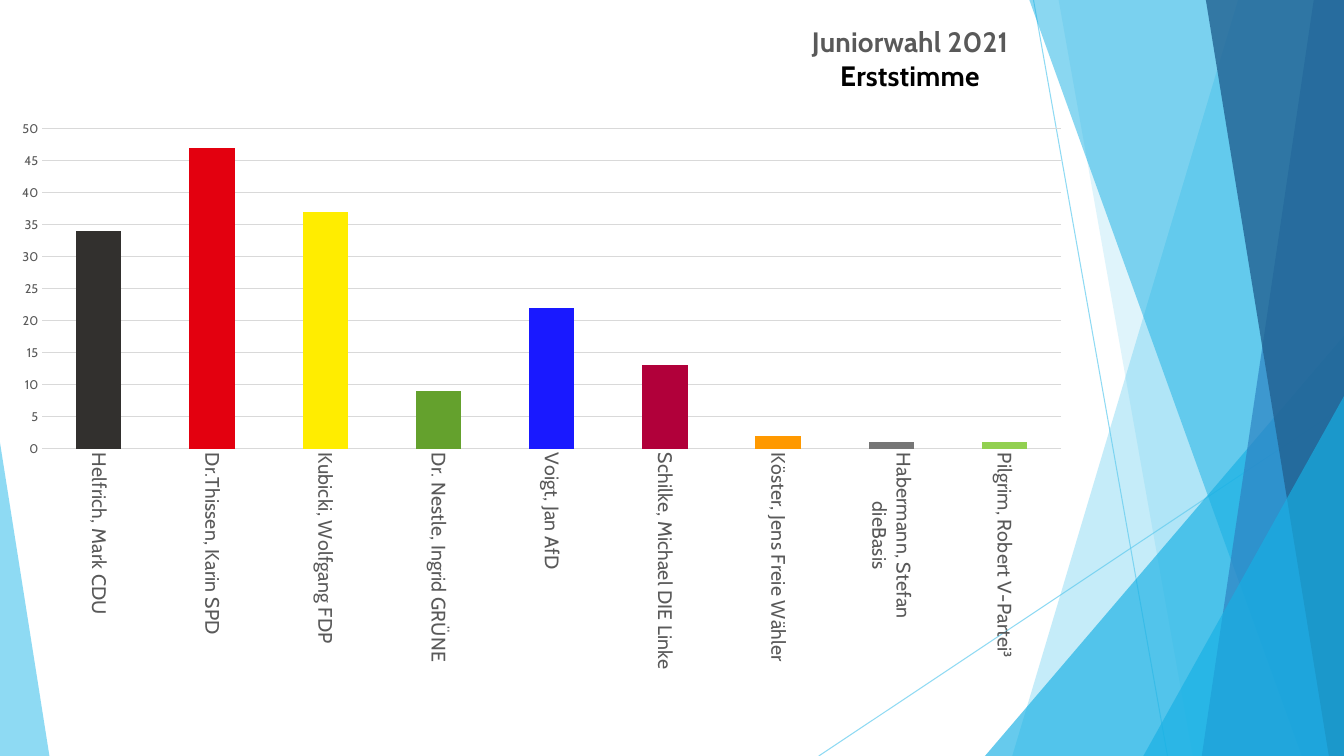
from lxml.etree import SubElement
from pptx import Presentation
from pptx.chart.data import CategoryChartData
from pptx.dml.color import RGBColor
from pptx.enum.chart import XL_CHART_TYPE, XL_TICK_MARK
from pptx.enum.shapes import MSO_CONNECTOR, MSO_SHAPE
from pptx.oxml import parse_xml
from pptx.oxml.ns import nsdecls, qn
from pptx.util import Inches, Pt

WIDE, HIGH = Inches(13.33), Inches(7.5)
FONT = "Cabin"
BLACK = RGBColor(0x00, 0x00, 0x00)
GRAY = RGBColor(0x59, 0x59, 0x59)
PALE = RGBColor(0xD9, 0xD9, 0xD9)
SKY = RGBColor(0x5F, 0xCB, 0xEF)
CYAN = RGBColor(0x17, 0xB0, 0xE4)
BLUE = RGBColor(0x2E, 0x83, 0xC3)
NAVY = RGBColor(0x22, 0x62, 0x92)

TITLE = [("Juniorwahl 2021", GRAY), ("Erststimme", BLACK)]
VOTES = [
    ("Helfrich, Mark CDU", 34, RGBColor(0x32, 0x30, 0x2E)),
    ("Dr.Thissen, Karin SPD", 47, RGBColor(0xE3, 0x00, 0x0F)),
    ("Kubicki, Wolfgang FDP", 37, RGBColor(0xFF, 0xED, 0x00)),
    ("Dr. Nestle, Ingrid GRÜNE", 9, RGBColor(0x64, 0xA1, 0x2D)),
    ("Voigt, Jan AfD", 22, RGBColor(0x19, 0x19, 0xFF)),
    ("Schilke, Michael DIE Linke", 13, RGBColor(0xB1, 0x00, 0x3A)),
    ("Köster, Jens Freie Wähler", 2, RGBColor(0xFF, 0x99, 0x00)),
    ("Habermann, Stefan\ndieBasis", 1, RGBColor(0x76, 0x76, 0x76)),
    ("Pilgrim, Robert V-Partei³", 1, RGBColor(0x92, 0xD0, 0x50)),
]

# Places are percent of the slide's width and height.
LINES = [(76.9, 0, 86.87, 100), (100, 53.73, 60.92, 100)]
# Bands reach the right edge: left x at top, left x at bottom, colour, opacity.
# Wedges rise to a slide side: left, top, width, peak side, colour, opacity.
DECOR = [
    ("band", 92.12, 75.32, SKY, 36),
    ("band", 78.77, 88.75, SKY, 20),
    ("wedge", 73.29, 44.4, 26.71, 1, CYAN, 66),
    ("band", 76.59, 96.85, CYAN, 50),
    ("band", 97.75, 89.42, BLUE, 70),
    ("band", 89.72, 98.87, NAVY, 80),
    ("wedge", 85.07, 52.4, 14.93, 1, CYAN, 66),
    ("wedge", 0, 58.53, 3.68, 0, SKY, 70),
]
CHART = (0, 1.2, 80.57, 89.2)
# Shares of the chart's size.
PLOT = {"x": 0.039, "y": 0.177, "w": 0.941, "h": 0.475}
HEAD = {"x": 0.747, "y": 0.016}


def across(part):
    return round(WIDE * part / 100)


def down(part):
    return round(HIGH * part / 100)


def fade(fill, alpha):
    """Set the opacity of a solid fill, in percent."""
    for color in fill.iter(qn("a:srgbClr")):
        SubElement(color, qn("a:alpha"), val=str(alpha * 1000))


def paint(shape, color, alpha):
    shape.shadow.inherit = False
    shape.fill.solid()
    shape.fill.fore_color.rgb = color
    shape.line.fill.background()
    fade(shape.fill._xPr, alpha)


def add_band(shapes, top, foot, color, alpha):
    pen = shapes.build_freeform(across(top), 0)
    pen.add_line_segments([(WIDE, 0), (WIDE, HIGH), (across(foot), HIGH)])
    paint(pen.convert_to_shape(), color, alpha)


def add_wedge(shapes, left, top, width, peak, color, alpha):
    shape = shapes.add_shape(MSO_SHAPE.ISOSCELES_TRIANGLE, across(left),
                             down(top), across(width), down(100 - top))
    shape.adjustments[0] = peak
    paint(shape, color, alpha)


def add_line(shapes, x1, y1, x2, y2):
    line = shapes.add_connector(MSO_CONNECTOR.STRAIGHT, across(x1), down(y1),
                                across(x2), down(y2))
    line.line.color.rgb = SKY
    line.line.width = Pt(0.75)
    props = line._element.spPr
    fade(props, 70)
    SubElement(props, qn("a:effectLst"))


def style(font, size, color, bold=False):
    font.name, font.size, font.bold = FONT, Pt(size), bold
    font.color.rgb = color


def write(frame, lines, size, bold=False):
    for num, (text, color) in enumerate(lines):
        para = frame.add_paragraph() if num else frame.paragraphs[0]
        run = para.add_run()
        run.text = text
        style(run.font, size, color, bold)


def place(owner, index, inner, spots):
    """Give a chart part a fixed place, as shares of the chart."""
    for old in owner.findall(qn("c:layout")):
        owner.remove(old)
    target = '<c:layoutTarget val="inner"/>' if inner else ""
    modes = "".join(f'<c:{key}Mode val="edge"/>' for key in "xy")
    sizes = "".join(f'<c:{key} val="{val}"/>' for key, val in spots.items())
    owner.insert(index, parse_xml(
        f'<c:layout {nsdecls("c")}><c:manualLayout>{target}{modes}{sizes}'
        "</c:manualLayout></c:layout>"))


def add_votes(shapes):
    names, counts, colors = zip(*VOTES)
    data = CategoryChartData()
    data.categories = names
    data.add_series("Series 1", counts)
    left, top, width, height = CHART
    chart = shapes.add_chart(XL_CHART_TYPE.COLUMN_STACKED, across(left),
                             down(top), across(width), down(height), data).chart
    style(chart.font, 10, BLACK)
    chart.has_legend = False
    chart.has_title = True
    write(chart.chart_title.text_frame, TITLE, 20, bold=True)
    place(chart.chart_title._element, 1, False, HEAD)
    place(chart._chartSpace.chart.plotArea, 0, True, PLOT)

    plot = chart.plots[0]
    plot.gap_width, plot.overlap = 150, 100
    plot.vary_by_categories = False
    bars = plot.series[0]
    bars.format.fill.solid()
    bars.format.fill.fore_color.rgb = SKY
    for num, color in enumerate(colors):
        fill = bars.points[num].format.fill
        fill.solid()
        fill.fore_color.rgb = color

    cats, vals = chart.category_axis, chart.value_axis
    for axis, size in ((cats, 14), (vals, 9)):
        axis.major_tick_mark = axis.minor_tick_mark = XL_TICK_MARK.NONE
        style(axis.tick_labels.font, size, GRAY)
    body = cats._element.find(qn("c:txPr")).find(qn("a:bodyPr"))
    body.set("rot", "5400000")
    body.set("vert", "horz")
    vals.minimum_scale, vals.maximum_scale, vals.major_unit = 0, 50, 5
    vals.format.line.fill.background()
    vals.has_major_gridlines = True
    for line in (cats.format.line, vals.major_gridlines.format.line):
        line.color.rgb = PALE
        line.width = Pt(0.75)


def main():
    deck = Presentation()
    deck.slide_width, deck.slide_height = WIDE, HIGH
    shapes = deck.slides.add_slide(deck.slide_layouts[6]).shapes
    for ends in LINES:
        add_line(shapes, *ends)
    draw = {"band": add_band, "wedge": add_wedge}
    for kind, *parts in DECOR:
        draw[kind](shapes, *parts)
    add_votes(shapes)
    deck.save("out.pptx")


if __name__ == "__main__":
    main()
